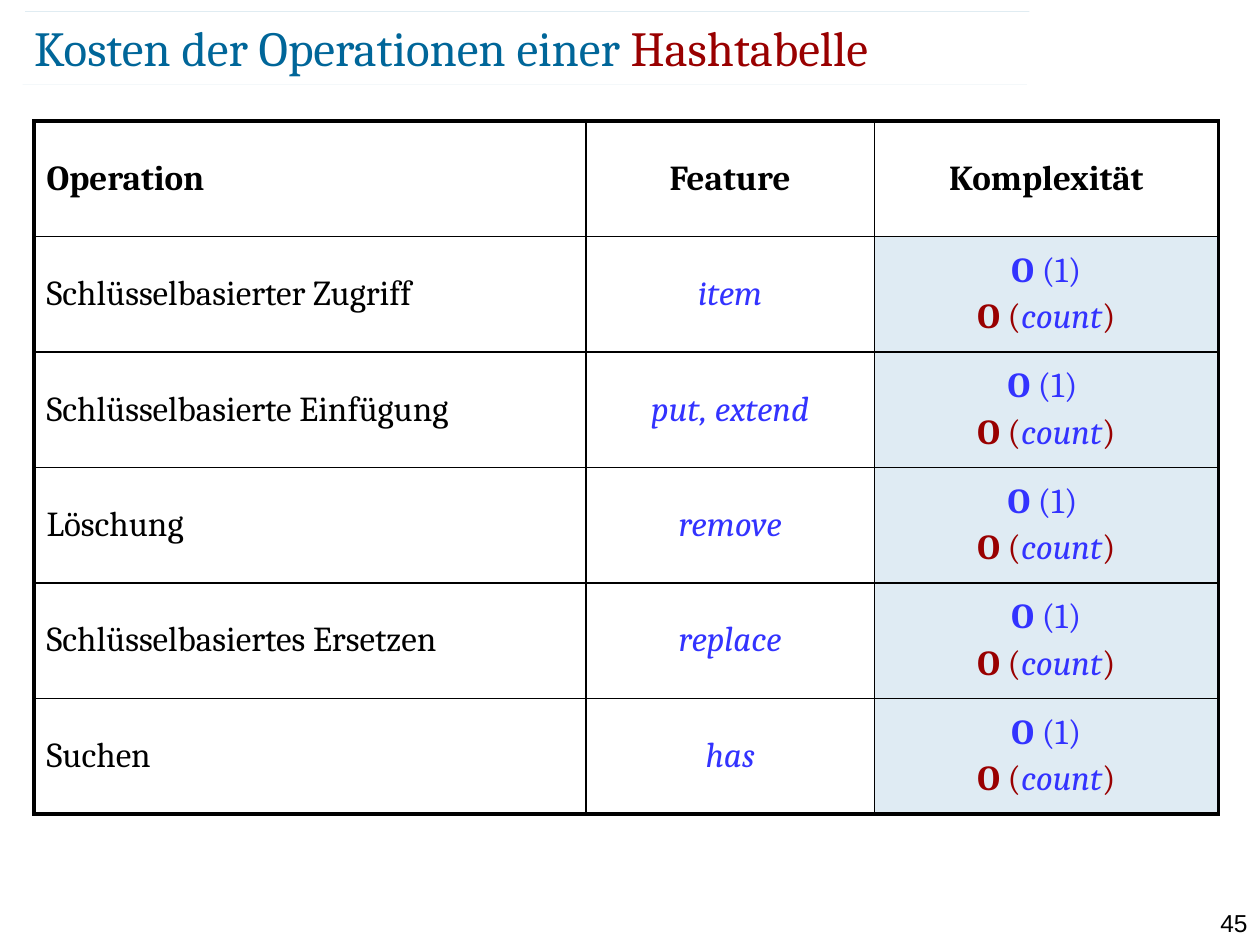
from lxml import etree
from pptx import Presentation
from pptx.dml.color import RGBColor
from pptx.enum.shapes import MSO_CONNECTOR
from pptx.enum.text import MSO_ANCHOR, MSO_AUTO_SIZE, PP_ALIGN
from pptx.oxml.ns import qn
from pptx.util import Inches, Pt

LEFT, MID, RIGHT = PP_ALIGN.LEFT, PP_ALIGN.CENTER, PP_ALIGN.RIGHT
CENTRE = MSO_ANCHOR.MIDDLE
FIXED = MSO_AUTO_SIZE.NONE
STRAIGHT = MSO_CONNECTOR.STRAIGHT
COLORS = {"black": "000000", "teal": "006699", "red": "990000",
          "blue": "3333FF", "pale": "DFEBF3"}


def rgb(name):
    return RGBColor.from_string(COLORS[name])


def write(para, text, color, **style):
    """Add a run; style overrides the body font."""
    run = para.add_run()
    run.text = text
    font = {"name": "Cambria", "size": Pt(20), "bold": False,
            "italic": False} | style
    for key, value in font.items():
        setattr(run.font, key, value)
    run.font.color.rgb = rgb(color)


prs = Presentation()
prs.slide_width, prs.slide_height = Inches(10), Inches(7.5)
slide = prs.slides.add_slide(prs.slide_layouts[5])
shapes = slide.shapes

# Faint rules around the title
for left, top in ((0.18, 0.67), (0.2, 0.09)):
    rule = shapes.add_connector(STRAIGHT, Inches(left), Inches(top),
                                Inches(left + 7.97), Inches(top))
    rule.line.width = Pt(0.1)
    rule.line.color.rgb = rgb("teal")
    tint = rule.line._ln.find(".//" + qn("a:srgbClr"))
    etree.SubElement(tint, qn("a:alpha"), val="35000")
    etree.SubElement(rule._element.spPr, qn("a:effectLst"))

# Title
title = shapes.title
title.left, title.top = Inches(0.27), Inches(0.13)
title.width, title.height = Inches(8.69), Inches(0.48)
frame = title.text_frame
form = {"margin_left": 0, "margin_right": 0, "margin_top": 0,
        "margin_bottom": 0, "vertical_anchor": CENTRE,
        "word_wrap": True, "auto_size": FIXED}
for key, value in form.items():
    setattr(frame, key, value)
para = frame.paragraphs[0]
para.alignment = LEFT
write(para, "Kosten der Operationen einer ", "teal", size=Pt(28))
write(para, "Hashtabelle", "red", size=Pt(28))

# Page number
page = shapes.add_textbox(Inches(9.45), Inches(7.16), Inches(0.55), Inches(0.24))
page.text_frame.word_wrap = True
para = page.text_frame.paragraphs[0]
para.alignment = RIGHT
write(para, "45", "black", name="Arial", size=Pt(14))

# Table grid
HEADS = ("Operation", "Feature", "Komplexität")
ROWS = (
    ("Schlüsselbasierter Zugriff", "item", " (1)"),
    ("Schlüsselbasierte Einfügung", "put, extend", " (1) "),
    ("Löschung", "remove", " (1) "),
    ("Schlüsselbasiertes Ersetzen", "replace", " (1)"),
    ("Suchen", "has", " (1)"),
)
WIDTHS = (4.38, 2.29, 2.73)
last_row, last_col = len(ROWS), len(HEADS) - 1
table = shapes.add_table(len(ROWS) + 1, len(HEADS), Inches(0.27), Inches(0.96),
                         Inches(9.4), Inches(5.5)).table
table.first_row = table.horz_banding = False
for col, width in zip(table.columns, WIDTHS):
    col.width = Inches(width)

# Cells
for r, row in enumerate((HEADS,) + ROWS):
    for c, text in enumerate(row):
        cell = table.cell(r, c)
        cell.vertical_anchor = CENTRE
        para = cell.text_frame.paragraphs[0]
        para.alignment = MID if c else LEFT

        # Thick outer frame, thin inner lines
        outer = {"lnL": c == 0, "lnR": c == last_col,
                 "lnT": r == 0, "lnB": r == last_row}
        for side, thick in outer.items():
            edge = etree.SubElement(cell._tc.get_or_add_tcPr(), qn("a:" + side),
                                    w=str(Pt(2.25 if thick else 1)))
            fill = etree.SubElement(edge, qn("a:solidFill"))
            etree.SubElement(fill, qn("a:srgbClr"), val=COLORS["black"])

        if r and c == last_col:
            cell.fill.solid()
            cell.fill.fore_color.rgb = rgb("pale")
        else:
            cell.fill.background()

        if r == 0:
            write(para, text, "black", bold=True)
        elif c == 0:
            write(para, text, "black")
        elif c == 1:
            write(para, text, "blue", italic=True)
        else:
            # Average case above worst case
            write(para, "O", "blue", bold=True)
            write(para, text, "blue")
            worst = cell.text_frame.add_paragraph()
            worst.alignment = MID
            worst.space_before = Pt(3.5)
            write(worst, "O", "red", bold=True)
            write(worst, " (", "red")
            write(worst, "count", "blue", italic=True)
            write(worst, ")", "red")

prs.save("out.pptx")
